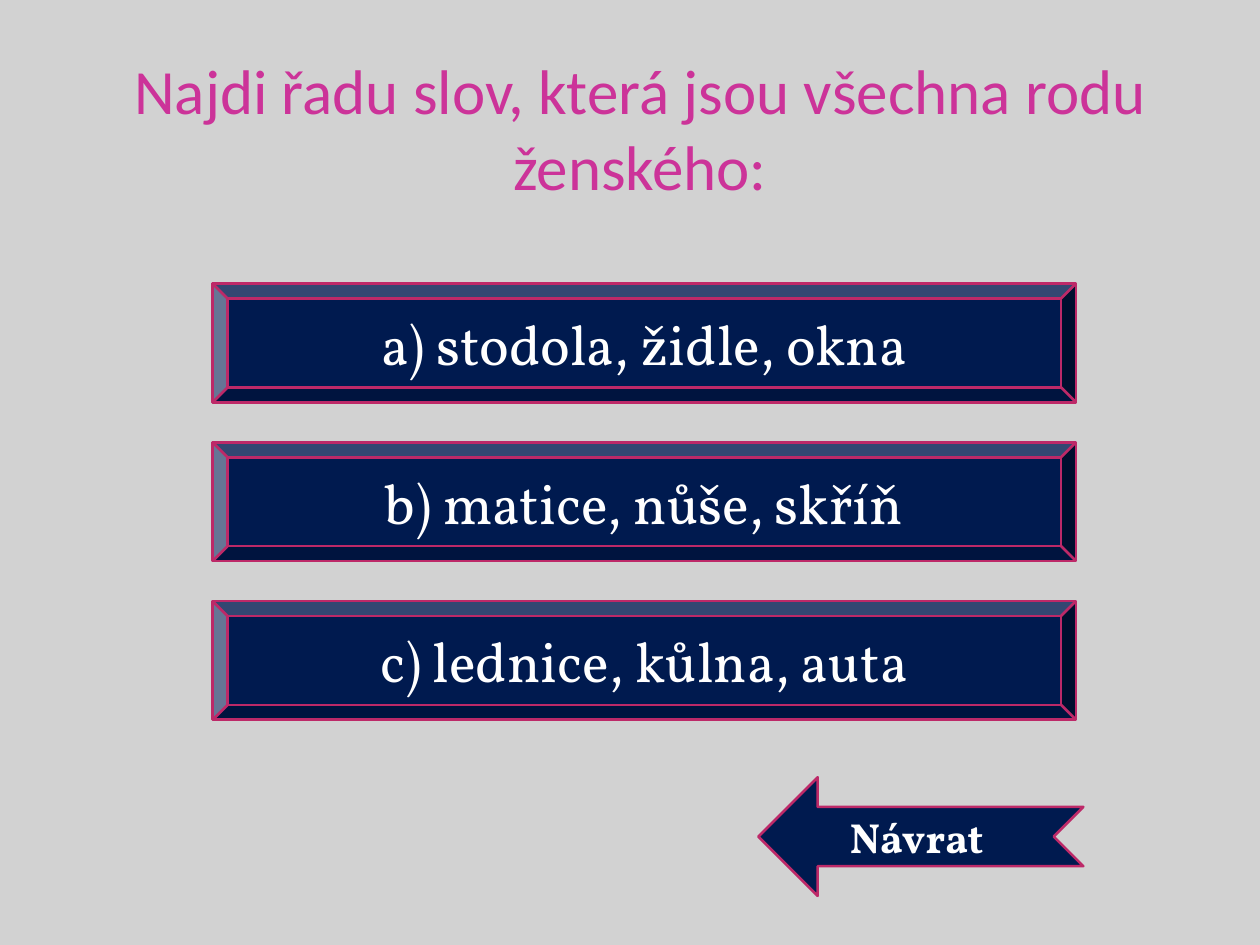
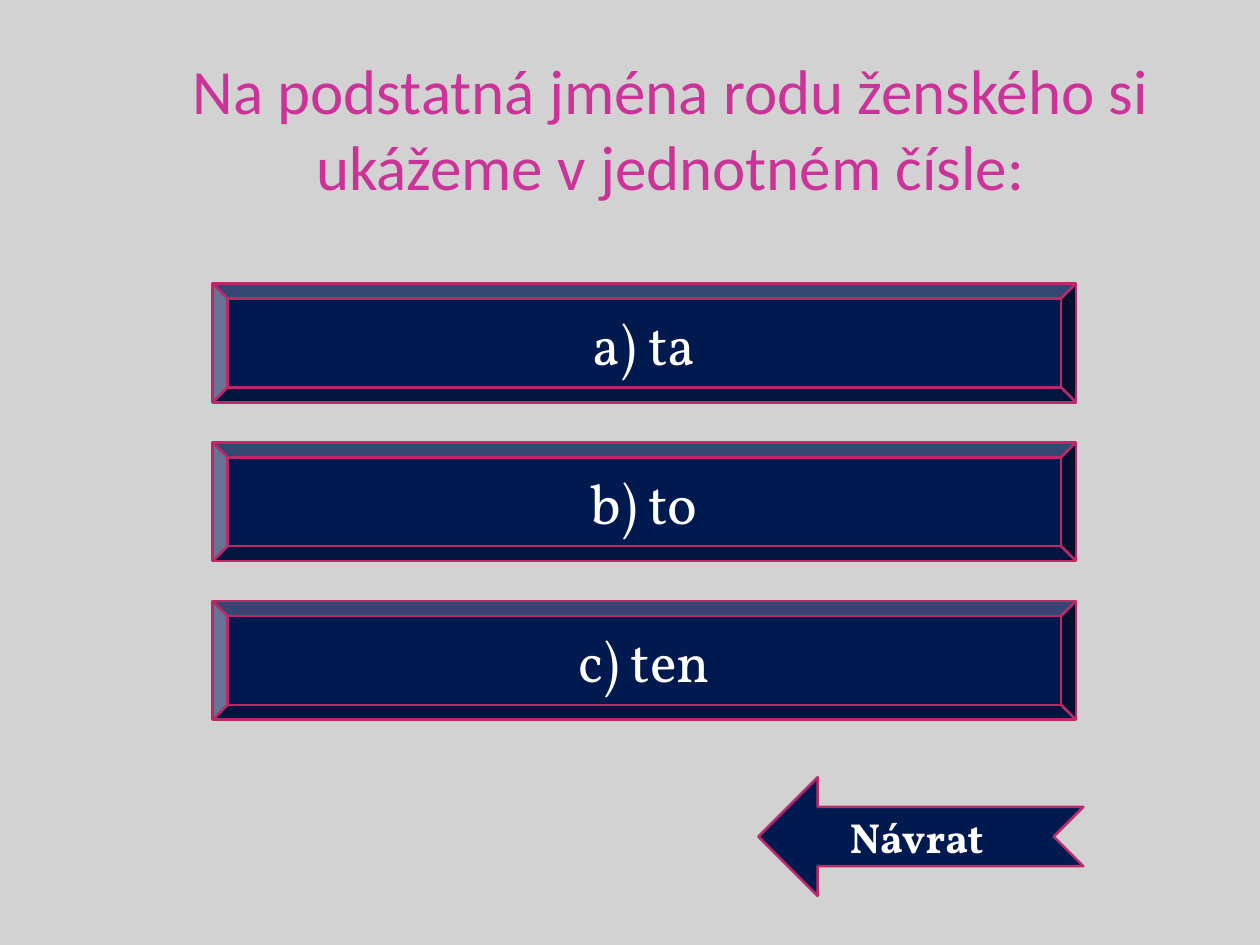
from dataclasses import dataclass

from pptx import Presentation
from pptx.dml.color import RGBColor
from pptx.enum.shapes import MSO_SHAPE as Preset
from pptx.enum.text import MSO_ANCHOR as Anchor, PP_ALIGN as Align
from pptx.oxml.ns import qn
from pptx.util import Cm, Pt


@dataclass(frozen=True)
class Theme:
    background: str = "D2D2D2"
    title: str = "CC3399"
    button: str = "001A4F"
    outline: str = "BD2968"
    button_text: str = "FFFFFF"
    title_font: str = "Calibri"
    button_font: str = "Vollkorn"
    title_size: int = 36
    answer_size: int = 32
    return_size: int = 24
    outline_width: float = 1.5


THEME = Theme()

ANSWER_LEFT, ANSWER_TOP, ANSWER_WIDTH = 4.29, 5.72, 17.4
ANSWER_STEP = 3.2
BUTTON_HEIGHT = 2.39

# Question, its left edge in cm, and the answers
QUESTIONS = [
    ("Najdi řadu slov, která jsou všechna rodu ženského:", 2.49,
     ["a) stodola, židle, okna", "b) matice, nůše, skříň", "c) lednice, kůlna, auta"]),
    ("Na podstatná jména rodu ženského si ukážeme v jednotném čísle:", 3.1,
     ["a) ta", "b) to", "c) ten"]),
]


def write_text(shape, text, *, font, size, color, bold=False, anchor=Anchor.MIDDLE):
    frame = shape.text_frame
    frame.word_wrap = True
    frame.vertical_anchor = anchor
    paragraph = frame.paragraphs[0]
    paragraph.alignment = Align.CENTER
    run = paragraph.add_run()
    run.text = text
    run.font.name = font
    run.font.size = Pt(size)
    run.font.bold = bold
    run.font.color.rgb = RGBColor.from_string(color)


def add_title(slide, text, left):
    box = slide.shapes.add_textbox(Cm(left), Cm(0.91), Cm(20.83), Cm(3.18))
    frame = box.text_frame
    frame.margin_left = frame.margin_right = frame.margin_bottom = 0
    frame.margin_top = Cm(0.13)
    write_text(box, text, font=THEME.title_font, size=THEME.title_size,
               color=THEME.title, anchor=Anchor.BOTTOM)


def add_button(slide, preset, text, left, top, width, **text_format):
    button = slide.shapes.add_shape(
        preset, Cm(left), Cm(top), Cm(width), Cm(BUTTON_HEIGHT))
    button.shadow.inherit = False
    button.fill.solid()
    button.fill.fore_color.rgb = RGBColor.from_string(THEME.button)
    button.line.color.rgb = RGBColor.from_string(THEME.outline)
    button.line.width = Pt(THEME.outline_width)
    write_text(button, text, font=THEME.button_font, color=THEME.button_text,
               **text_format)
    return button


def add_answers(slide, answers):
    for index, answer in enumerate(answers):
        add_button(slide, Preset.BEVEL, answer, ANSWER_LEFT,
                   ANSWER_TOP + index * ANSWER_STEP, ANSWER_WIDTH,
                   size=THEME.answer_size)


def add_return_arrow(slide):
    arrow = add_button(slide, Preset.NOTCHED_RIGHT_ARROW, "Návrat ", 15.29, 15.67,
                       6.55, size=THEME.return_size, bold=True)
    arrow.element.spPr.find(qn("a:xfrm")).set("flipH", "1")


def add_question_slide(presentation, question, title_left, answers):
    slide = presentation.slides.add_slide(presentation.slide_layouts[6])
    background = slide.background.fill
    background.solid()
    background.fore_color.rgb = RGBColor.from_string(THEME.background)
    add_title(slide, question, title_left)
    add_answers(slide, answers)
    add_return_arrow(slide)


def main():
    presentation = Presentation()
    presentation.slide_width = Cm(25.4)
    presentation.slide_height = Cm(19.05)
    for question, title_left, answers in QUESTIONS:
        add_question_slide(presentation, question, title_left, answers)
    presentation.save("out.pptx")


if __name__ == "__main__":
    main()
